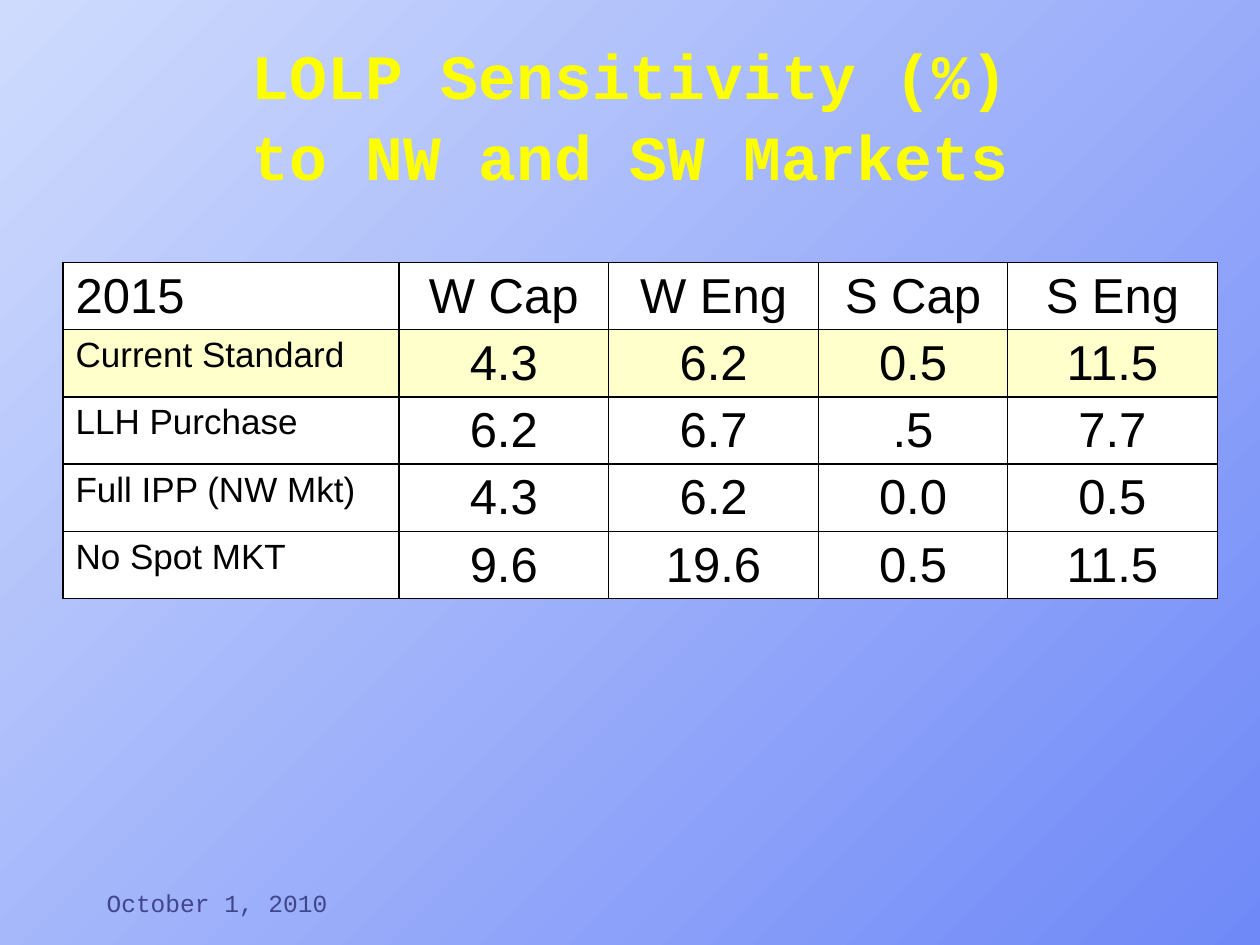
from copy import deepcopy

from lxml import etree
from pptx import Presentation
from pptx.dml.color import RGBColor
from pptx.enum.text import MSO_ANCHOR, MSO_AUTO_SIZE, PP_ALIGN
from pptx.oxml.ns import qn
from pptx.util import Cm, Pt

LEFT, CENTER = PP_ALIGN.LEFT, PP_ALIGN.CENTER
BOTTOM = MSO_ANCHOR.BOTTOM
NO_AUTOFIT = MSO_AUTO_SIZE.NONE

SKY = RGBColor(0xCF, 0xDB, 0xFD)
BLUE = RGBColor(0x6F, 0x89, 0xF7)
YELLOW = RGBColor(0xFF, 0xFF, 0x00)
CREAM = RGBColor(0xFF, 0xFF, 0xCC)
WHITE = RGBColor(0xFF, 0xFF, 0xFF)
BLACK = RGBColor(0x00, 0x00, 0x00)
INDIGO = RGBColor(0x40, 0x45, 0x8C)


def write_text(text_frame, text, font="Arial", size=28, color=BLACK,
               bold=False, align=LEFT, line_spacing=1.0):
    paragraph = text_frame.paragraphs[0]
    paragraph.text = text
    paragraph.alignment = align
    paragraph.line_spacing = line_spacing
    for run in paragraph.runs:
        run.font.name = font
        run.font.size = Pt(size)
        run.font.bold = bold
        run.font.color.rgb = color
    for line_break in paragraph._p.findall(qn("a:br")):
        line_break.append(deepcopy(paragraph.runs[0]._r.rPr))


def add_borders(cell, color=BLACK, width=1):
    properties = cell._tc.get_or_add_tcPr()
    for side in ("a:lnL", "a:lnR", "a:lnT", "a:lnB"):
        line = etree.SubElement(properties, qn(side), w=str(Pt(width)))
        fill = etree.SubElement(line, qn("a:solidFill"))
        etree.SubElement(fill, qn("a:srgbClr"), val=str(color))


presentation = Presentation()
presentation.slide_width = Cm(25.4)
presentation.slide_height = Cm(19.05)
slide = presentation.slides.add_slide(presentation.slide_layouts[5])

background = slide.background.fill
background.gradient()
background.gradient_angle = 315
for stop, color, position in zip(background.gradient_stops, (SKY, BLUE), (0, 1)):
    stop.color.rgb = color
    stop.position = position

title = slide.shapes.title
title.left, title.top = Cm(1.9), Cm(0.84)
title.width, title.height = Cm(21.6), Cm(3.18)
title.text_frame.auto_size = NO_AUTOFIT
title.text_frame.vertical_anchor = BOTTOM
write_text(title.text_frame, "LOLP Sensitivity (%)\vto NW and SW Markets",
           font="Courier New", size=36, color=YELLOW, bold=True,
           align=CENTER, line_spacing=1.07)

rows = [
    ("2015", "W Cap", "W Eng", "S Cap", "S Eng"),
    ("Current Standard", "4.3", "6.2", "0.5", "11.5"),
    ("LLH Purchase", "6.2", "6.7", ".5", "7.7"),
    ("Full IPP (NW Mkt)", "4.3", "6.2", "0.0", "0.5"),
    ("No Spot MKT", "9.6", "19.6", "0.5", "11.5"),
]
column_widths = [6.77, 4.23, 4.23, 3.81, 4.23]
row_height = 1.355
highlighted_row = 1

table = slide.shapes.add_table(
    len(rows), len(column_widths), Cm(1.27), Cm(5.29),
    Cm(sum(column_widths)), Cm(row_height * len(rows))).table
for column, width in zip(table.columns, column_widths):
    column.width = Cm(width)

for row_index, values in enumerate(rows):
    for column_index, value in enumerate(values):
        cell = table.cell(row_index, column_index)
        is_label = column_index == 0
        write_text(cell.text_frame, value,
                   size=20 if is_label and row_index > 0 else 28,
                   align=LEFT if is_label else CENTER)
        add_borders(cell)
        cell.fill.solid()
        cell.fill.fore_color.rgb = CREAM if row_index == highlighted_row else WHITE

date_box = slide.shapes.add_textbox(Cm(1.9), Cm(17.35), Cm(5.29), Cm(1.27))
date_box.text_frame.word_wrap = True
date_box.text_frame.vertical_anchor = BOTTOM
write_text(date_box.text_frame, "October 1, 2010",
           font="Courier New", size=14, color=INDIGO)

presentation.save("out.pptx")
